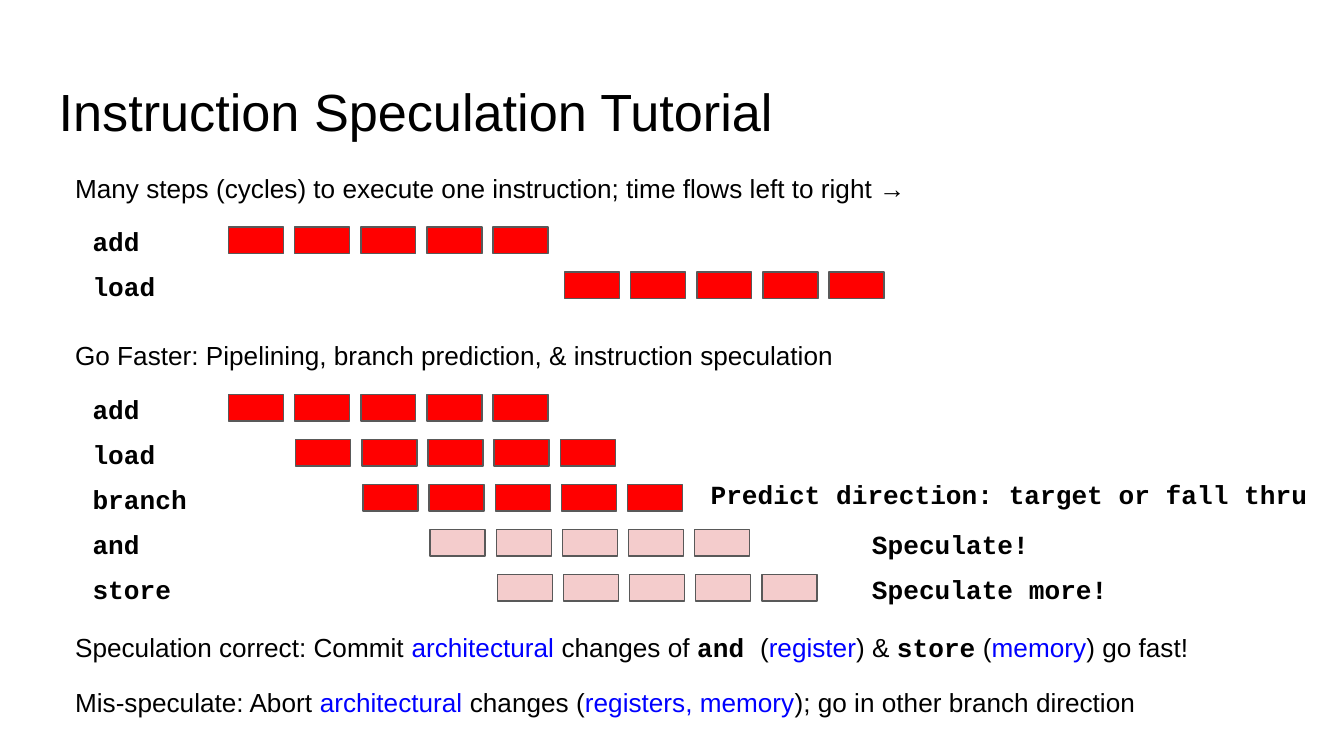
from pptx import Presentation
from pptx.dml.color import RGBColor as RGB
from pptx.enum.shapes import MSO_SHAPE as SHAPE
from pptx.enum.text import MSO_ANCHOR as ANCHOR, PP_ALIGN as ALIGN
from pptx.util import Cm, Pt

BLACK = RGB(0, 0, 0)
BLUE = RGB(0, 0, 255)
RED = RGB(255, 0, 0)
PINK = RGB(0xF4, 0xCC, 0xCC)
GREY = RGB(0x59, 0x59, 0x59)
SANS, MONO = "Arial", "Courier New"

STAGES = 5
STAGE_PITCH = 1.25
START_PITCH = 1.27
ROW_PITCH = 0.85
TEXT_HEIGHT = 1.07


def fill_text(tf, runs, size=14):
    """Write (text, colour, font) runs into one left-aligned paragraph."""
    tf.word_wrap = True
    tf.vertical_anchor = ANCHOR.TOP
    tf.margin_left = tf.margin_right = Cm(0.25)
    tf.margin_top = tf.margin_bottom = Cm(0.25)
    p = tf.paragraphs[0]
    p.alignment = ALIGN.LEFT
    for text, colour, font in runs:
        r = p.add_run()
        r.text = text
        r.font.size = Pt(size)
        r.font.name = font
        r.font.bold = font == MONO
        r.font.color.rgb = colour


def add_text(shapes, x, y, w, runs):
    """Add a one-line text box at x, y with width w in centimetres."""
    sp = shapes.add_textbox(Cm(x), Cm(y), Cm(w), Cm(TEXT_HEIGHT))
    fill_text(sp.text_frame, runs)


def add_title(s, x, y, w, h, text):
    """Place and format the title placeholder."""
    sp = s.shapes.title
    sp.left, sp.top, sp.width, sp.height = Cm(x), Cm(y), Cm(w), Cm(h)
    fill_text(sp.text_frame, [(text, BLACK, SANS)], size=28)


def add_instruction(s, x, y, name, start, colour, note):
    """Add one grouped row: name, stage boxes from cycle start, and a note."""
    shapes = s.shapes.add_group_shape().shapes
    add_text(shapes, x, y, 2.44, [(name, BLACK, MONO)])
    first = x + 2.82 + start * START_PITCH
    for stage in range(STAGES):
        sp = shapes.add_shape(SHAPE.RECTANGLE, Cm(first + stage * STAGE_PITCH),
                              Cm(y + 0.27), Cm(1.04), Cm(0.5))
        sp.shadow.inherit = False
        sp.fill.solid()
        sp.fill.fore_color.rgb = colour
        sp.line.color.rgb = GREY
        sp.line.width = Pt(0.75)
    if note:
        text, dx, dy, w = note
        add_text(shapes, x + dx, y + dy, w, [(text, BLACK, MONO)])


def add_timeline(s, x, y, heading, rows):
    """Add a heading and the instruction rows below it."""
    add_text(s.shapes, x, y, 16.66, [(heading, BLACK, SANS)])
    for i, (name, start, colour, note) in enumerate(rows):
        add_instruction(s, x + 0.33, y + 1.02 + i * ROW_PITCH,
                        name, start, colour, note)


def add_outcomes(s, x, y, w, outcomes):
    """Add the closing lines at an equal pitch."""
    for i, runs in enumerate(outcomes):
        add_text(s.shapes, x, y + i * 1.05, w, runs)


def main():
    """Build and save the slide."""
    prs = Presentation()
    prs.slide_width, prs.slide_height = Cm(25.4), Cm(14.29)
    s = prs.slides.add_slide(prs.slide_layouts[5])
    add_title(s, 0.86, 1.24, 23.67, 1.6, "Instruction Speculation Tutorial")
    add_timeline(
        s, 1.17, 3,
        "Many steps (cycles) to execute one instruction; time flows left to right →",
        [("add", 0, RED, None), ("load", 5, RED, None)])
    add_timeline(
        s, 1.17, 6.17,
        "Go Faster: Pipelining, branch prediction, & instruction speculation",
        [("add", 0, RED, None),
         ("load", 1, RED, None),
         ("branch", 2, RED,
          ("Predict direction: target or fall thru", 11.68, -0.1, 11.91)),
         ("and", 3, PINK, ("Speculate!", 14.73, 0, 6.93)),
         ("store", 4, PINK, ("Speculate more!", 14.73, 0, 6.93))])
    add_outcomes(s, 1.17, 11.68, 23.5, [
        [("Speculation correct: Commit ", BLACK, SANS),
         ("architectural", BLUE, SANS),
         (" changes of ", BLACK, SANS),
         ("and ", BLACK, MONO),
         ("(", BLACK, SANS),
         ("register", BLUE, SANS),
         (") & ", BLACK, SANS),
         ("store", BLACK, MONO),
         (" (", BLACK, SANS),
         ("memory", BLUE, SANS),
         (") go fast!", BLACK, SANS)],
        [("Mis-speculate: Abort ", BLACK, SANS),
         ("architectural", BLUE, SANS),
         (" changes (", BLACK, SANS),
         ("registers, memory", BLUE, SANS),
         ("); go in other branch direction", BLACK, SANS)]])
    prs.save("out.pptx")


if __name__ == "__main__":
    main()
